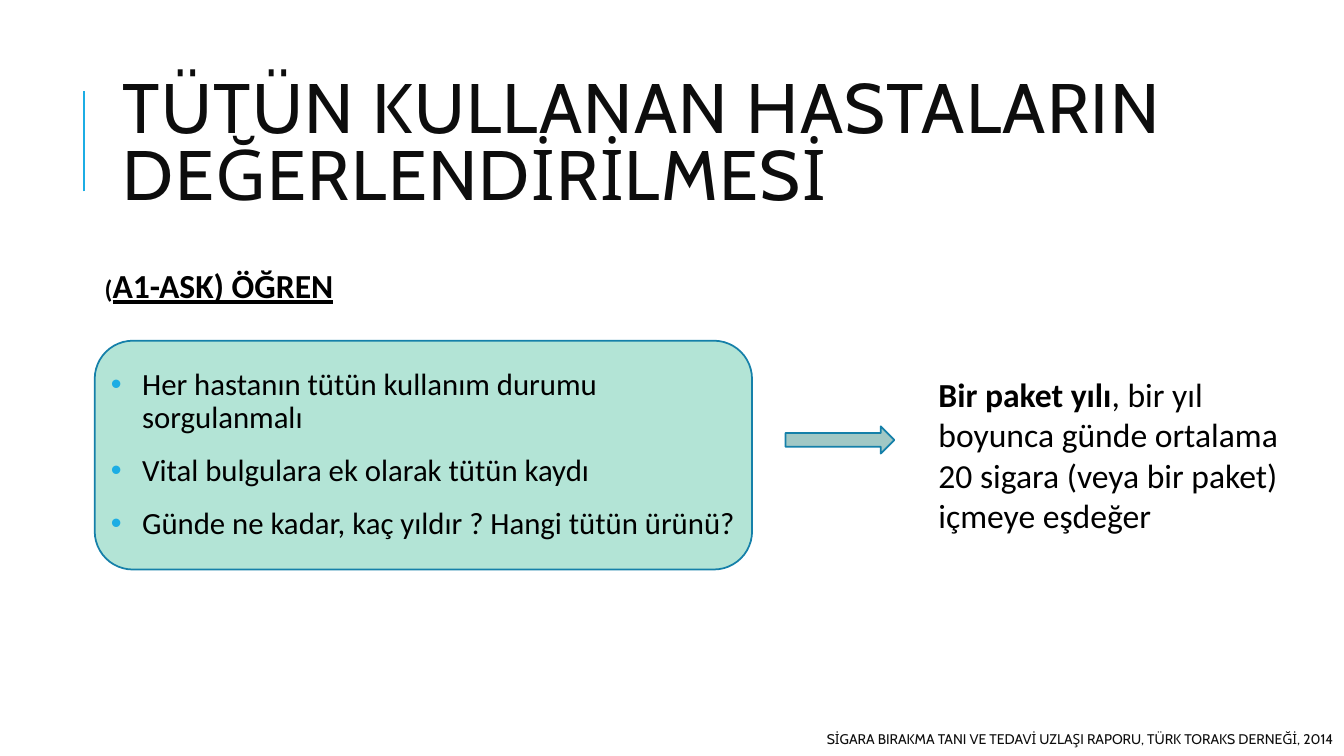
from dataclasses import dataclass

from lxml import etree
from pptx import Presentation
from pptx.dml.color import RGBColor
from pptx.enum.shapes import MSO_CONNECTOR, MSO_SHAPE
from pptx.enum.text import MSO_ANCHOR, MSO_AUTO_SIZE, PP_ALIGN
from pptx.oxml.ns import qn
from pptx.util import Inches, Pt

ROUNDED, ARROW = MSO_SHAPE.ROUNDED_RECTANGLE, MSO_SHAPE.RIGHT_ARROW
STRAIGHT = MSO_CONNECTOR.STRAIGHT
TOP, MIDDLE = MSO_ANCHOR.TOP, MSO_ANCHOR.MIDDLE
LEFT, RIGHT = PP_ALIGN.LEFT, PP_ALIGN.RIGHT
NO_FIT = MSO_AUTO_SIZE.NONE


@dataclass(frozen=True)
class Theme:
    accent: str = "1CADE4"
    outline: str = "1580A9"
    mint: str = "B3E4D6"
    sage: str = "A1C8C5"
    ink: str = "0D0D0D"
    black: str = "000000"
    heading_font: str = "Cabin"
    body_font: str = "Calibri"
    title: int = 50
    lead: int = 24
    bullet: int = 22
    small: int = 18
    source: int = 10


@dataclass(frozen=True)
class Area:
    x: float
    y: float
    w: float
    h: float

    def place(self) -> tuple[int, int, int, int]:
        return (int(W * self.x / 100), int(H * self.y / 100),
                int(W * self.w / 100), int(H * self.h / 100))


@dataclass(frozen=True)
class Run:
    text: str
    size: int
    bold: bool = False
    underline: bool = False
    font: str = Theme.body_font
    color: str = Theme.black


@dataclass(frozen=True)
class Label:
    area: Area
    runs: tuple[Run, ...]
    align: PP_ALIGN = LEFT
    anchor: MSO_ANCHOR = TOP


@dataclass(frozen=True)
class Panel:
    kind: MSO_SHAPE
    area: Area
    fill: str


T = Theme()
W, H = Inches(13.33), Inches(7.5)
MARGIN = 7.05

TITLE = Run("TÜTÜN KULLANAN HASTALARIN DEĞERLENDİRİLMESİ", T.title,
            font=T.heading_font, color=T.ink)
TITLE_AREA = Area(8.4, 8.53, 86.35, 21.87)
RULE = Area(6.23, 12, 0, 13.33)
QUESTIONS = Panel(ROUNDED, Area(MARGIN, 45.07, 48.91, 30.27), T.mint)
POINTER = Panel(ARROW, Area(58.44, 56.4, 8.1, 3.6), T.sage)
BULLETS = (
    "Her hastanın tütün kullanım durumu sorgulanmalı",
    "Vital bulgulara ek olarak tütün kaydı",
    "Günde ne kadar, kaç yıldır ? Hangi tütün ürünü?",
)
LABELS = (
    Label(Area(MARGIN, 34.4, 29.33, 6.67), (
        Run("(", T.small, bold=True),
        Run("A1-ASK) ÖĞREN", T.lead, bold=True, underline=True))),
    Label(Area(69.09, 48.8, 27.23, 22.93), (
        Run("Bir paket yılı", T.lead, bold=True),
        Run(", bir yıl boyunca günde ortalama 20 sigara (veya bir paket) "
            "içmeye eşdeğer", T.lead))),
    Label(Area(51.54, 95.73, 48.39, 4), (
        Run("SİGARA BIRAKMA TANI VE TEDAVİ UZLAŞI RAPORU, "
            "TÜRK TORAKS DERNEĞİ, 2014", T.source,
            font=T.heading_font, color=T.ink),), RIGHT, MIDDLE),
)


def apply(target, values: dict) -> None:
    for name, value in values.items():
        setattr(target, name, value)


def move(sp, area: Area) -> None:
    apply(sp, dict(zip(("left", "top", "width", "height"), area.place())))


def set_frame(tf, anchor: MSO_ANCHOR) -> None:
    apply(tf, {"word_wrap": True, "auto_size": NO_FIT, "vertical_anchor": anchor})


def add_run(p, run: Run):
    r = p.add_run()
    r.text = run.text
    apply(r.font, {"name": run.font, "size": Pt(run.size), "bold": run.bold,
                   "underline": run.underline})
    r.font.color.rgb = RGBColor.from_string(run.color)
    return r


def add_bullet(p) -> None:
    pPr = p._p.get_or_add_pPr()
    apply_indent = {"marL": Inches(0.31), "indent": -Inches(0.31)}
    for name, value in apply_indent.items():
        pPr.set(name, str(value))
    color = etree.SubElement(pPr, qn("a:buClr"))
    etree.SubElement(color, qn("a:srgbClr"), val=T.accent)
    etree.SubElement(pPr, qn("a:buFont"), typeface="Arial")
    etree.SubElement(pPr, qn("a:buChar"), char="•")


def add_title(s) -> None:
    sp = s.shapes.title
    move(sp, TITLE_AREA)
    tf = sp.text_frame
    set_frame(tf, MIDDLE)
    p = tf.paragraphs[0]
    apply(p, {"alignment": LEFT, "line_spacing": 0.8})
    r = add_run(p, TITLE)
    r._r.get_or_add_rPr().set("spc", "100")


def add_rule(s) -> None:
    x, y, w, h = RULE.place()
    line = s.shapes.add_connector(STRAIGHT, x, y + h, x + w, y)
    line.line.color.rgb = RGBColor.from_string(T.accent)
    line.line.width = Pt(1.5)
    etree.SubElement(line._element.spPr, qn("a:effectLst"))


def add_panel(s, panel: Panel):
    sp = s.shapes.add_shape(panel.kind, *panel.area.place())
    sp.shadow.inherit = False
    sp.fill.solid()
    sp.fill.fore_color.rgb = RGBColor.from_string(panel.fill)
    sp.line.color.rgb = RGBColor.from_string(T.outline)
    sp.line.width = Pt(1.25)
    return sp


def add_questions(s) -> None:
    tf = add_panel(s, QUESTIONS).text_frame
    set_frame(tf, MIDDLE)
    sides = ("left", "top", "right", "bottom")
    apply(tf, {f"margin_{side}": Inches(0.05) for side in sides})
    for i, text in enumerate(BULLETS):
        p = tf.add_paragraph() if i else tf.paragraphs[0]
        add_bullet(p)
        apply(p, {"alignment": LEFT, "line_spacing": 0.9,
                  "space_before": Pt(12 if i else 0), "space_after": Pt(2)})
        add_run(p, Run(text, T.bullet))


def add_label(s, label: Label) -> None:
    tf = s.shapes.add_textbox(*label.area.place()).text_frame
    set_frame(tf, label.anchor)
    p = tf.paragraphs[0]
    p.alignment = label.align
    for run in label.runs:
        add_run(p, run)


def main() -> None:
    prs = Presentation()
    apply(prs, {"slide_width": W, "slide_height": H})
    s = prs.slides.add_slide(prs.slide_layouts[5])
    add_rule(s)
    add_questions(s)
    add_panel(s, POINTER)
    add_title(s)
    for label in LABELS:
        add_label(s, label)
    prs.save("out.pptx")


if __name__ == "__main__":
    main()
